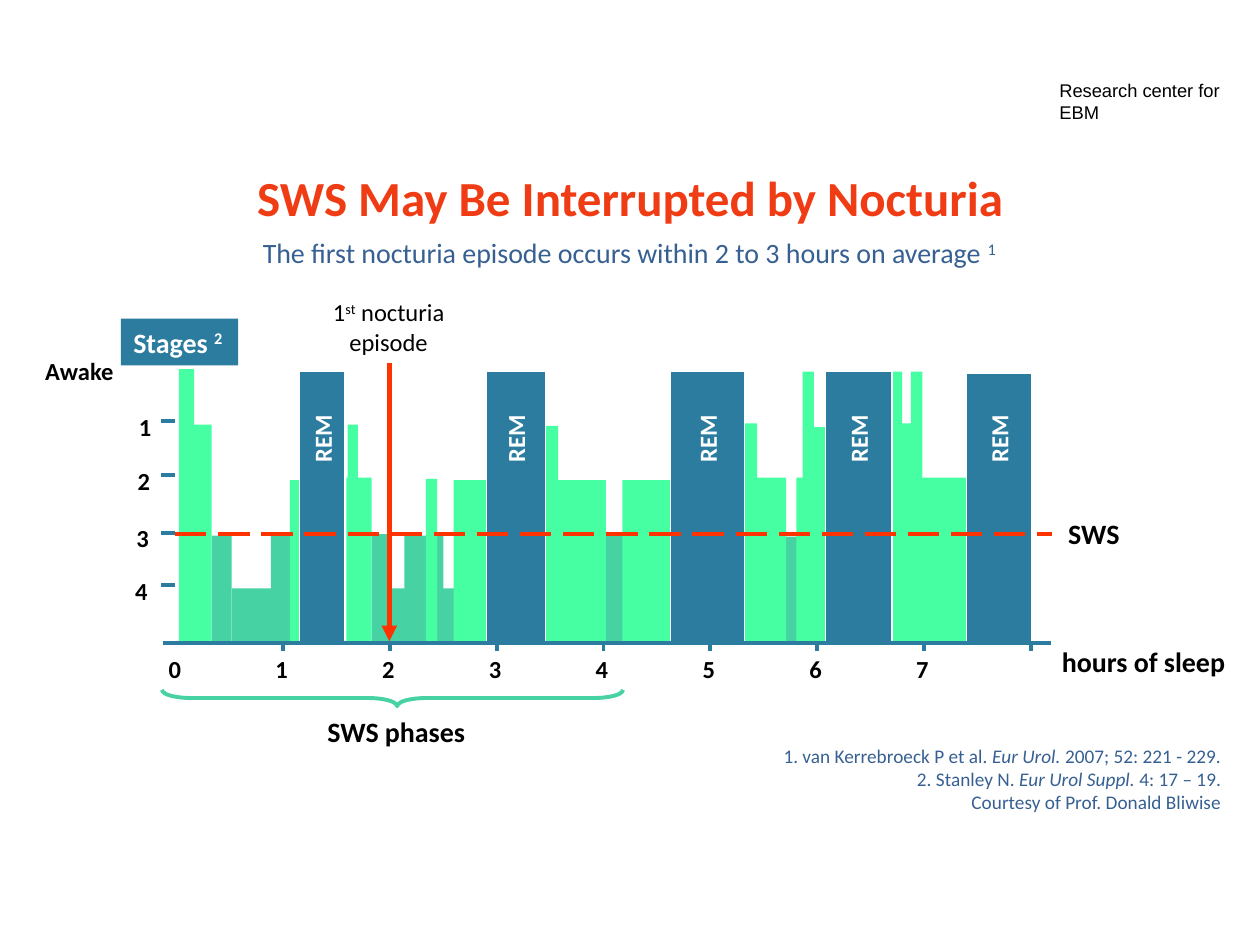
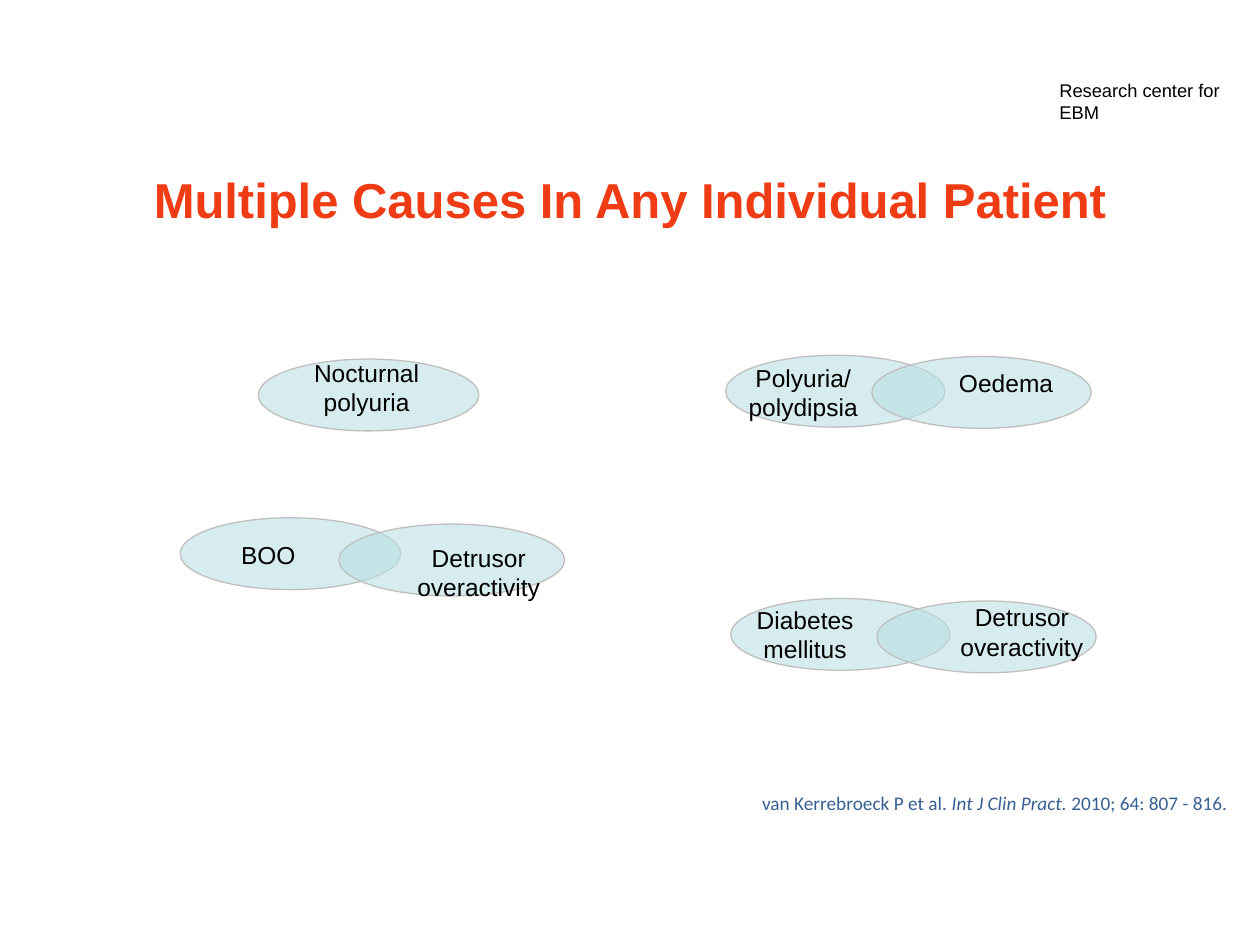
from lxml.etree import SubElement
from pptx import Presentation
from pptx.dml.color import RGBColor
from pptx.enum.dml import MSO_LINE
from pptx.enum.shapes import MSO_CONNECTOR, MSO_SHAPE
from pptx.enum.text import MSO_ANCHOR, PP_ALIGN
from pptx.oxml.ns import qn
from pptx.util import Inches, Pt

BLACK, WHITE = "000000", "FFFFFF"
RED, ALERT, NAVY = "F03C14", "FF3300", "376092"
TEAL, LIGHT, DARK = "2C7C9F", "47FFA3", "47D2A3"
AQUA, GRAY = "BBE0E3", "BFBFBF"
LEFT, MID, RIGHT = PP_ALIGN.LEFT, PP_ALIGN.CENTER, PP_ALIGN.RIGHT


def tint(code):
    return RGBColor.from_string(code)


class Deck:
    def __init__(self):
        self.show = Presentation()
        self.show.slide_width, self.show.slide_height = Inches(10), Inches(7.5)
        self.slide = None

    def begin(self, title, box, font, gap=1.0, anchor=MSO_ANCHOR.MIDDLE):
        """Start a slide with its title and the corner label."""
        self.slide = self.show.slides.add_slide(self.show.slide_layouts[5])
        self.text((8.31, 0.58, 1.69, 0.28), ["Research center for EBM"],
                  10.5, font="Arial", wrap=True)
        head = self.slide.shapes.title
        head.left, head.top, head.width, head.height = map(Inches, box)
        self.put(head.text_frame, [title], 28, RED, True, MID, font, True)
        head.text_frame.vertical_anchor = anchor
        head.text_frame.paragraphs[0].line_spacing = gap

    def put(self, frame, lines, size, color, bold, align, font, wrap):
        """Fill a frame; a line is a string or a list of (text, style) parts."""
        frame.word_wrap = wrap
        for i, line in enumerate(lines):
            para = frame.add_paragraph() if i else frame.paragraphs[0]
            para.alignment = align
            para.font.size, para.font.name, para.font.bold = Pt(size), font, bold
            para.font.color.rgb = tint(color)
            for part, style in [(line, "")] if isinstance(line, str) else line:
                run = para.add_run()
                run.text = part
                if style == "italic":
                    run.font.italic = True
                elif style == "super":
                    run._r.get_or_add_rPr().set("baseline", "30000")

    def text(self, box, lines, size=14, color=BLACK, bold=False, align=LEFT,
             font="Calibri", wrap=False, turn=0):
        item = self.slide.shapes.add_textbox(*map(Inches, box))
        item.rotation = turn
        self.put(item.text_frame, lines, size, color, bold, align, font, wrap)

    def shape(self, kind, box, fill=None, line=None, width=0.75, alpha=None):
        item = self.slide.shapes.add_shape(kind, *map(Inches, box))
        item.shadow.inherit = False
        if fill:
            item.fill.solid()
            item.fill.fore_color.rgb = tint(fill)
        else:
            item.fill.background()
        if alpha:
            code = item._element.spPr.find(".//" + qn("a:srgbClr"))
            SubElement(code, qn("a:alpha"), val=str(alpha * 1000))
        if line:
            item.line.color.rgb = tint(line)
            item.line.width = Pt(width)
        else:
            item.line.fill.background()
        return item

    def line(self, start, end, color=TEAL, width=2.25, dash=None, arrow=False):
        item = self.slide.shapes.add_connector(
            MSO_CONNECTOR.STRAIGHT, *map(Inches, start + end))
        item.line.color.rgb = tint(color)
        item.line.width = Pt(width)
        if dash:
            item.line.dash_style = dash
        props = item._element.spPr
        if arrow:
            SubElement(props.get_or_add_ln(), qn("a:tailEnd"), type="triangle")
        SubElement(props, qn("a:effectLst"))


BASE, ZERO, HOUR = 5.1, 1.4, 6.78 / 8

# Left, top and width; every bar stands on the time axis.
DEEP = [(1.68, 4.25, 0.16), (1.84, 4.67, 0.32), (2.15, 4.24, 0.22),
        (2.95, 4.24, 0.14), (3.02, 4.67, 0.59), (3.21, 4.25, 0.31),
        (4.69, 4.25, 0.3), (6.14, 4.26, 0.25)]
SHALLOW = [(1.42, 2.93, 0.12), (1.51, 3.37, 0.17), (2.3, 3.81, 0.08),
           (2.76, 3.37, 0.08), (2.75, 3.79, 0.2), (3.38, 3.8, 0.09),
           (3.6, 3.81, 0.26), (4.33, 3.38, 0.1), (4.43, 3.81, 0.38),
           (4.94, 3.81, 0.38), (5.85, 3.36, 0.16), (5.99, 3.79, 0.25),
           (6.32, 3.79, 0.15), (6.37, 2.95, 0.09), (6.45, 3.39, 0.1),
           (7.07, 2.95, 0.09), (7.07, 3.36, 0.21), (7.23, 2.95, 0.09),
           (7.22, 3.79, 0.48)]
REM = [(2.38, 2.95, 0.36), (3.86, 2.95, 0.47), (5.32, 2.95, 0.59),
       (6.55, 2.95, 0.53), (7.67, 2.96, 0.52)]
# Tick height, then left and top of the label.
STAGES = [(3.34, 1.0, 3.22), (3.77, 0.99, 3.65), (4.23, 0.98, 4.1), (4.64, 0.97, 4.52)]


def sleep(deck):
    deck.begin("SWS May Be Interrupted by Nocturia", (0.06, 1.27, 9.88, 0.58), "Calibri")
    deck.text((0.71, 1.82, 8.57, 0.41),
              [[("The first nocturia episode occurs within 2 to 3 hours on average ", ""),
                ("1", "super")]], 16, NAVY, align=MID, wrap=True)

    for bars, fill, edge in ((DEEP, DARK, None), (SHALLOW, LIGHT, None), (REM, TEAL, WHITE)):
        for left, top, width in bars:
            deck.shape(MSO_SHAPE.RECTANGLE, (left, top, width, BASE - top), fill, edge)
    for left, _, width in REM:
        deck.text((left + width / 2 - 0.29, 3.31, 0.58, 0.34), ["REM"],
                  color=WHITE, bold=True, turn=270)

    for hour in range(8):
        deck.text((1.24 + hour * HOUR, 5.14, 0.3, 0.34), [str(hour)], bold=True)
        tick = ZERO + (hour + 1) * HOUR
        deck.line((tick, BASE), (tick, 5.17))
    for stage, (tick, left, top) in enumerate(STAGES, 1):
        deck.line((1.28, tick), (1.39, tick))
        deck.text((left, top, 0.3, 0.34), [str(stage)], bold=True, align=RIGHT)
    deck.line((1.29, BASE), (8.34, BASE))
    deck.line((1.39, 4.24), (8.35, 4.24), ALERT, dash=MSO_LINE.LONG_DASH)
    deck.line((3.09, 2.88), (3.09, 5.09), ALERT, 3, arrow=True)

    deck.text((0.25, 2.78, 0.75, 0.34), ["Awake"], bold=True, align=RIGHT)
    tag = deck.shape(MSO_SHAPE.RECTANGLE, (0.96, 2.53, 0.93, 0.37), TEAL)
    deck.put(tag.text_frame, [[("Stages ", ""), ("2", "super")]], 16, WHITE,
             True, LEFT, "Calibri", False)
    deck.text((2.42, 2.31, 1.33, 0.57),
              [[("1", ""), ("st", "super"), (" nocturia episode", "")]],
              align=MID, wrap=True)
    deck.text((8.33, 5.07, 1.67, 0.37), ["hours of sleep"], 16, bold=True, wrap=True)
    deck.text((8.38, 4.05, 0.86, 0.37), ["SWS"], 16, bold=True, wrap=True)

    brace = deck.shape(MSO_SHAPE.RIGHT_BRACE, (3.05, 3.71, 0.13, 3.66), None, DARK, 2.25)
    brace.rotation = 90
    brace.adjustments[0], brace.adjustments[1] = 1.78, 0.49
    deck.text((2.32, 5.62, 1.65, 0.37), ["SWS phases"], 16, bold=True, align=MID, wrap=True)

    deck.text((5.08, 5.86, 4.71, 0.46),
              [[("1. van Kerrebroeck P et al. ", ""), ("Eur Urol.", "italic"),
                (" 2007; 52: 221 - 229.", "")],
               [("2. Stanley N.", ""), (" Eur Urol Suppl.", "italic"), (" 4: 17 – 19.", "")],
               "Courtesy of Prof. Donald Bliwise"],
              11, NAVY, align=RIGHT, wrap=True)


# Left, top and width of each oval, then of its label, and the label's lines.
CAUSES = [
    ((2.05, 2.85, 1.75), (2.39, 2.79, 1.04), ["Nocturnal", "polyuria"]),
    ((1.43, 4.11, 1.75), (1.81, 4.24, 0.64), ["BOO"]),
    ((2.69, 4.16, 1.79), (3.21, 4.26, 1.18), ["Detrusor", "overactivity"]),
    ((5.76, 2.82, 1.74), (5.84, 2.83, 1.07), ["Polyuria/", "polydipsia"]),
    ((6.92, 2.83, 1.74), (7.51, 2.87, 0.95), ["Oedema"]),
    ((5.8, 4.75, 1.74), (5.9, 4.75, 0.98), ["Diabetes", "mellitus"]),
    ((6.96, 4.77, 1.74), (7.52, 4.73, 1.18), ["Detrusor", "overactivity"]),
]


def causes(deck):
    deck.begin("Multiple Causes In Any Individual Patient", (0.5, 1.37, 9, 0.9),
               "Arial", 0.85, MSO_ANCHOR.TOP)
    for oval, _, _ in CAUSES:
        deck.shape(MSO_SHAPE.OVAL, (*oval, 0.57), AQUA, GRAY, alpha=60)
    for _, place, lines in CAUSES:
        deck.text((*place, 0.11 + 0.23 * len(lines)), lines, align=MID, font="Arial")
    deck.text((4.68, 6.23, 5.16, 0.3),
              [[("van Kerrebroeck P et al. ", ""), ("Int J Clin Pract. ", "italic"),
                ("2010; 64: 807 - 816.", "")]],
              11, NAVY, align=RIGHT, wrap=True)


def main():
    deck = Deck()
    sleep(deck)
    causes(deck)
    deck.show.save("out.pptx")


if __name__ == "__main__":
    main()
